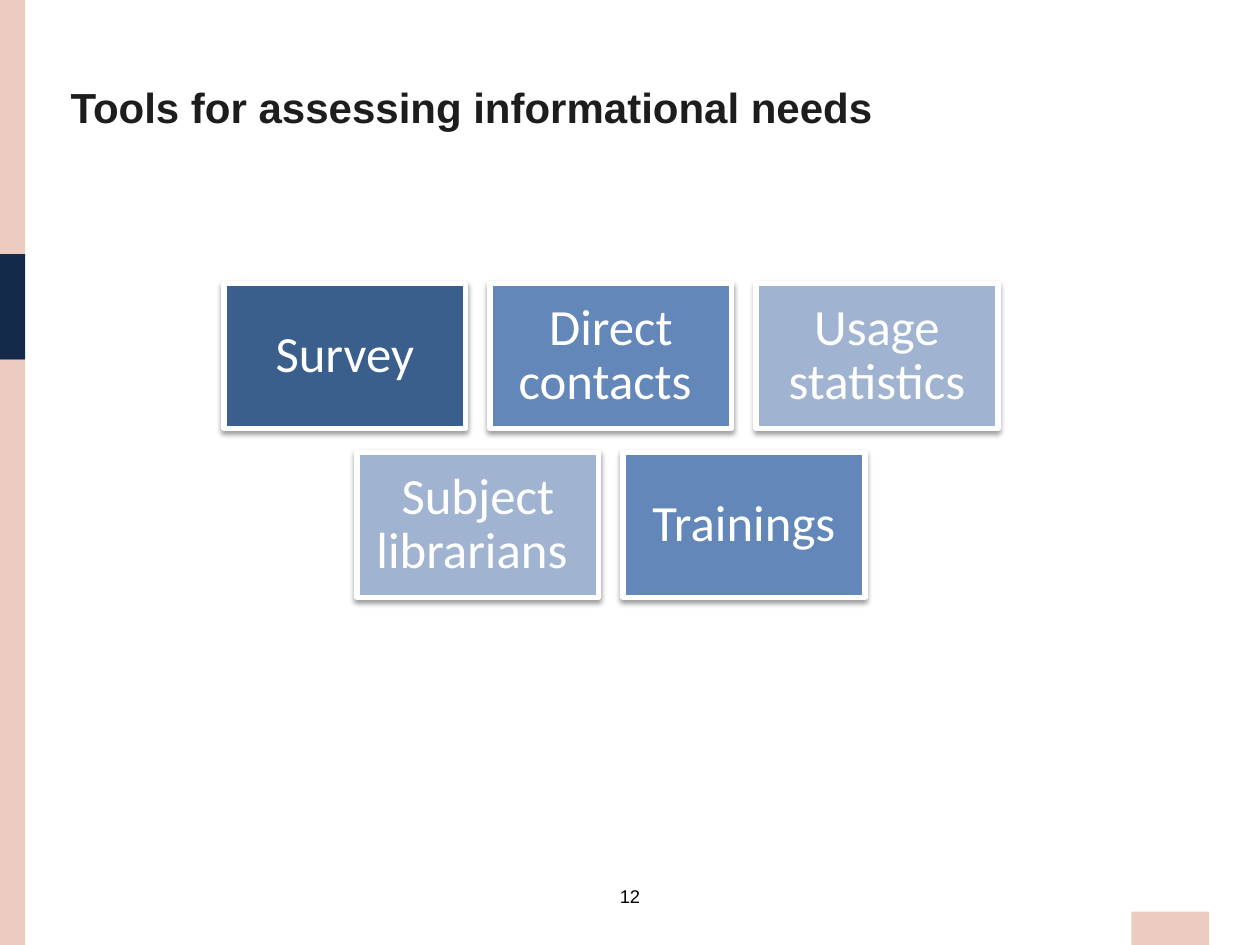
from lxml import etree
from pptx import Presentation
from pptx.dml.color import RGBColor
from pptx.enum.shapes import MSO_SHAPE
from pptx.enum.text import MSO_ANCHOR, PP_ALIGN
from pptx.oxml.ns import qn
from pptx.util import Pt

RECTANGLE = MSO_SHAPE.RECTANGLE
TOP, MIDDLE = MSO_ANCHOR.TOP, MSO_ANCHOR.MIDDLE
LEFT, CENTER = PP_ALIGN.LEFT, PP_ALIGN.CENTER

COLORS = {
    "peach": "ECCBC0", "navy": "132A4A", "title": "1D1D1D",
    "dark": "3A5F8C", "medium": "6387B9", "light": "A0B3D1",
    "white": "FFFFFF", "black": "000000",
}
SLIDE_WIDTH, SLIDE_HEIGHT = 720, 540

# Tool tiles: rows of (label, colour), each row centred
TOOL_ROWS = [
    [("Survey", "dark"), ("Direct contacts ", "medium"), ("Usage statistics", "light")],
    [("Subject librarians ", "light"), ("Trainings", "medium")],
]
TILE_WIDTH, TILE_HEIGHT, TILE_GAP = 138.24, 82.8, 13.8
TILES_CENTER, TILES_TOP, TILE_INSET = 349.1, 162, 8.64


def color(name):
    return RGBColor.from_string(COLORS[name])


def format_text(paragraph, font_name, size, color_name, alignment, bold=False):
    paragraph.alignment = alignment
    for run in paragraph.runs:
        run.font.name = font_name
        run.font.size = Pt(size)
        run.font.bold = bold
        run.font.color.rgb = color(color_name)


def set_insets(text_frame, inset):
    text_frame.margin_left = text_frame.margin_right = Pt(inset)
    text_frame.margin_top = text_frame.margin_bottom = Pt(inset)


def add_rectangle(slide, left, top, width, height, fill):
    shape = slide.shapes.add_shape(RECTANGLE, Pt(left), Pt(top), Pt(width), Pt(height))
    shape.shadow.inherit = False
    shape.fill.solid()
    shape.fill.fore_color.rgb = color(fill)
    shape.line.fill.background()
    return shape


def add_soft_shadow(shape):
    effects = shape._element.spPr.find(qn("a:effectLst"))
    shadow = etree.SubElement(
        effects, qn("a:outerShdw"), blurRad=str(Pt(3.1)), dist=str(Pt(1.6)),
        dir="5400000", rotWithShape="0")
    shade = etree.SubElement(shadow, qn("a:srgbClr"), val=COLORS["black"])
    etree.SubElement(shade, qn("a:alpha"), val="38000")


def add_tile(slide, left, top, label, fill):
    tile = add_rectangle(slide, left, top, TILE_WIDTH, TILE_HEIGHT, fill)
    tile.line.color.rgb = color("white")
    tile.line.width = Pt(3)
    add_soft_shadow(tile)
    text_frame = tile.text_frame
    text_frame.text = label
    text_frame.word_wrap = True
    text_frame.vertical_anchor = MIDDLE
    set_insets(text_frame, TILE_INSET)
    paragraph = text_frame.paragraphs[0]
    paragraph.line_spacing = 0.9
    format_text(paragraph, "Calibri", 29, "white", CENTER)


def add_tiles(slide):
    for row_index, row in enumerate(TOOL_ROWS):
        row_width = len(row) * (TILE_WIDTH + TILE_GAP) - TILE_GAP
        row_left = TILES_CENTER - row_width / 2
        top = TILES_TOP + row_index * (TILE_HEIGHT + TILE_GAP)
        for column, (label, fill) in enumerate(row):
            left = row_left + column * (TILE_WIDTH + TILE_GAP)
            add_tile(slide, left, top, label, fill)


def add_decoration(slide):
    # Side band with a navy section
    edges = [0, 145.2, 205.6, SLIDE_HEIGHT]
    for top, bottom, fill in zip(edges, edges[1:], ["peach", "navy", "peach"]):
        add_rectangle(slide, 0, top, 14.4, bottom - top, fill)
    # Bottom tab
    add_rectangle(slide, 646.5, 521, 44.5, 19, "peach")


def set_title(slide, text):
    title = slide.shapes.title
    title.left, title.top = Pt(33.12), Pt(36.72)
    title.width, title.height = Pt(514), Pt(43.2)
    text_frame = title.text_frame
    text_frame.text = text
    text_frame.word_wrap = True
    text_frame.vertical_anchor = TOP
    paragraph = text_frame.paragraphs[0]
    paragraph.line_spacing = Pt(35)
    format_text(paragraph, "Arial", 24, "title", LEFT, bold=True)


def add_page_number(slide, number):
    box = slide.shapes.add_textbox(Pt(346.3), Pt(502.5), Pt(27.4), Pt(20.2))
    text_frame = box.text_frame
    text_frame.text = number
    text_frame.word_wrap = False
    format_text(text_frame.paragraphs[0], "Arial", 10.5, "black", CENTER)


def main():
    presentation = Presentation()
    presentation.slide_width = Pt(SLIDE_WIDTH)
    presentation.slide_height = Pt(SLIDE_HEIGHT)
    slide = presentation.slides.add_slide(presentation.slide_layouts[5])
    add_page_number(slide, "12")
    add_decoration(slide)
    set_title(slide, "Tools for assessing informational needs")
    add_tiles(slide)
    presentation.save("out.pptx")


if __name__ == "__main__":
    main()
